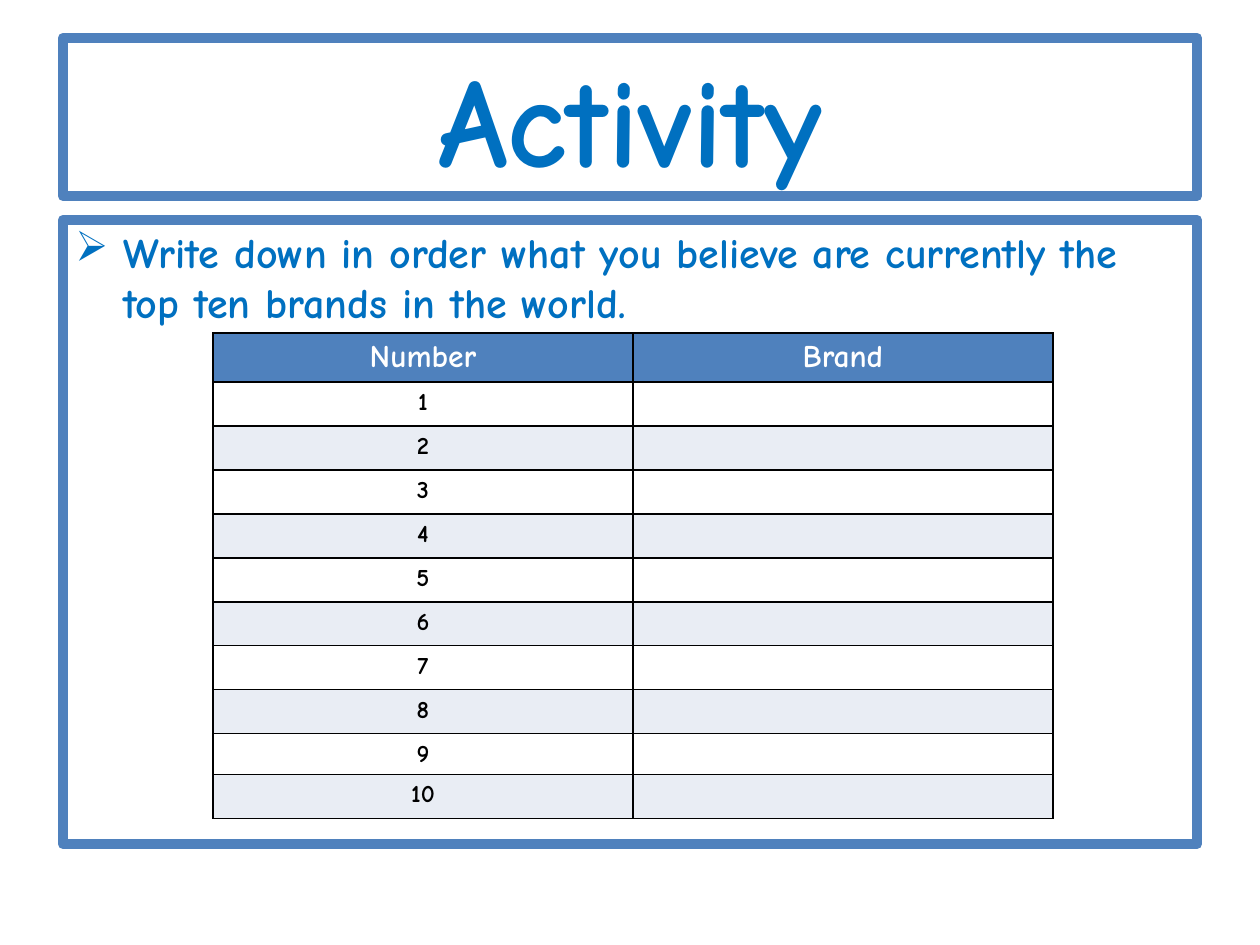
from lxml import etree
from pptx import Presentation
from pptx import util as u
from pptx.dml.color import RGBColor
from pptx.enum import shapes, text
from pptx.oxml import ns

PX = 914400 / 126
FONT = "Comic Neue"
WHITE = RGBColor(0xFF, 0xFF, 0xFF)
BLACK = RGBColor(0, 0, 0)
BLUE = RGBColor(0x00, 0x70, 0xC0)
STEEL = RGBColor(0x4F, 0x81, 0xBD)
PALE = RGBColor(0xE9, 0xED, 0xF4)


def emu(px):
    return u.Emu(round(px * PX))


def style(para, size, color, align):
    para.alignment = align
    font = para.font
    font.name, font.size, font.bold = FONT, u.Pt(size), True
    font.color.rgb = color


def frame(slide, box, words, size, align, anchor):
    """Draw a white panel with a thick border and one paragraph."""
    panel = slide.shapes.add_shape(shapes.MSO_SHAPE.RECTANGLE, *map(emu, box))
    panel.shadow.inherit = False
    panel.fill.solid()
    panel.fill.fore_color.rgb = WHITE
    panel.line.color.rgb = STEEL
    panel.line.width = u.Pt(6)
    etree.SubElement(panel.line._get_or_add_ln(), ns.qn("a:round"))
    body = panel.text_frame
    body.word_wrap = True
    body.vertical_anchor = anchor
    para = body.paragraphs[0]
    para.text = words
    style(para, size, BLUE, align)
    return para


def title(slide, box):
    frame(slide, box, "Activity", 72, text.PP_ALIGN.CENTER, text.MSO_ANCHOR.MIDDLE)


def task(slide, box):
    """Draw the task panel with its bullet, and the table inside it."""
    para = frame(
        slide, box,
        "Write down in order what you believe are currently the top ten brands in the world.",
        24, text.PP_ALIGN.LEFT, text.MSO_ANCHOR.TOP)
    para.space_before = u.Pt(5)
    # Hanging bullet, placed before the default run properties
    props = para._p.get_or_add_pPr()
    props.set("marL", str(u.Inches(0.38)))
    props.set("indent", str(-u.Inches(0.38)))
    mark = etree.Element(ns.qn("a:buChar"), char="➢")
    props.find(ns.qn("a:defRPr")).addprevious(mark)
    left, top = box[:2]
    grid(slide, (left + 150, top + 113, 840, 485))


def edge(cell):
    """Give a cell thin black borders, which come before its fill."""
    props = cell._tc.get_or_add_tcPr()
    for spot, side in enumerate(("lnL", "lnR", "lnT", "lnB")):
        line = etree.Element(ns.qn(f"a:{side}"), w=str(u.Pt(1)))
        fill = etree.SubElement(line, ns.qn("a:solidFill"))
        etree.SubElement(fill, ns.qn("a:srgbClr"), val=str(BLACK))
        props.insert(spot, line)


def grid(slide, box):
    """Draw the ranking table: a header and ten numbered rows."""
    rows = [("Number", "Brand")] + [(str(n), "") for n in range(1, 11)]
    table = slide.shapes.add_table(len(rows), 2, *map(emu, box)).table
    for col in table.columns:
        col.width = emu(box[2] // 2)
    for i, row in enumerate(rows):
        table.rows[i].height = emu({0: 49, 9: 41}.get(i, 44))
        for j, words in enumerate(row):
            cell = table.cell(i, j)
            cell.fill.solid()
            cell.fill.fore_color.rgb = STEEL if i == 0 else WHITE if i % 2 else PALE
            edge(cell)
            para = cell.text_frame.paragraphs[0]
            if words:
                para.text = words
            size, color = (18, WHITE) if i == 0 else (14, BLACK)
            style(para, size, color, text.PP_ALIGN.CENTER)


def main():
    deck = Presentation()
    deck.slide_width, deck.slide_height = emu(1260), emu(945)
    slide = deck.slides.add_slide(deck.slide_layouts[6])
    title(slide, (63, 38, 1134, 158))
    task(slide, (63, 220, 1134, 624))
    deck.save("out.pptx")


if __name__ == "__main__":
    main()
